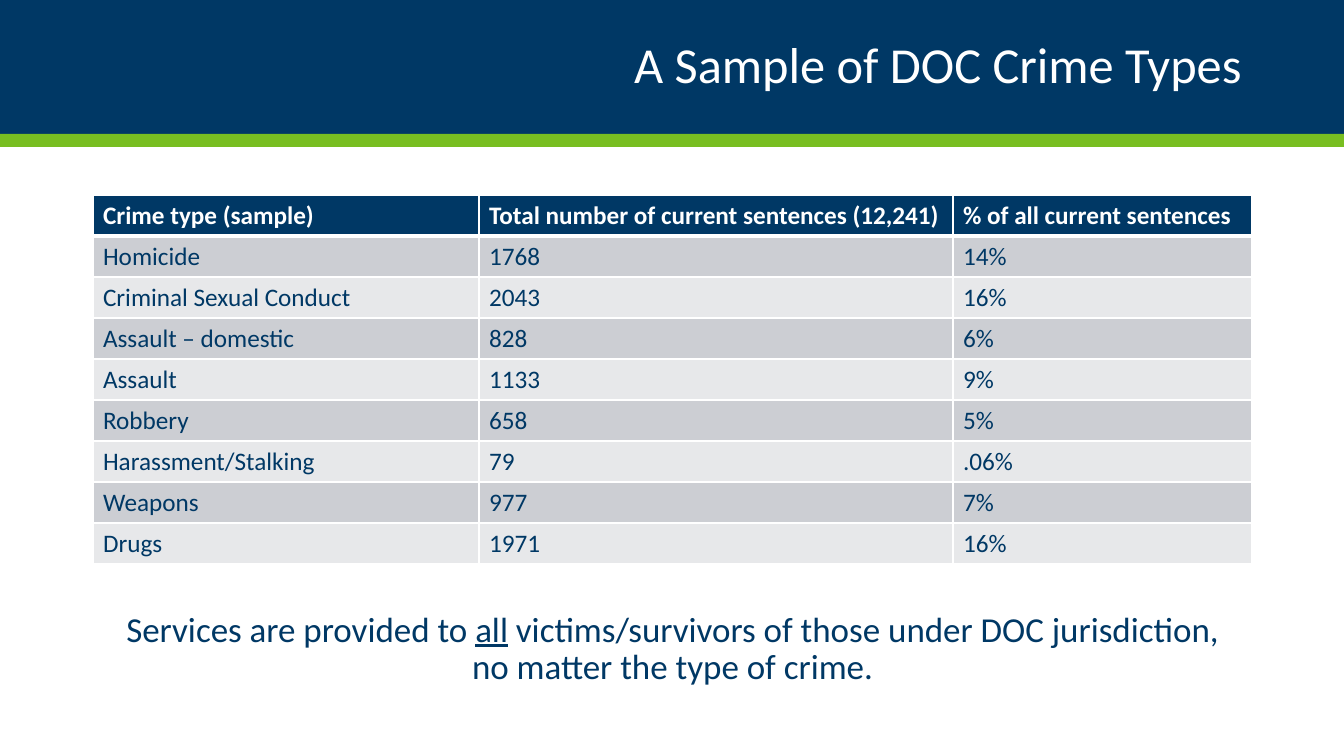
"""Build the slide showing a sample of DOC crime types."""
import dataclasses
import typing

import lxml.etree
import pptx
import pptx.dml.color
import pptx.enum.shapes
import pptx.enum.text
import pptx.oxml.ns
import pptx.util

EMU_PER_PX = 914400 / 100.8
SLIDE_WIDTH, SLIDE_HEIGHT = 1344, 756
NAVY = pptx.dml.color.RGBColor(0x00, 0x38, 0x65)
GREEN = pptx.dml.color.RGBColor(0x78, 0xBE, 0x21)
WHITE = pptx.dml.color.RGBColor(0xFF, 0xFF, 0xFF)
DARK_BAND = pptx.dml.color.RGBColor(0xCC, 0xCE, 0xD3)
LIGHT_BAND = pptx.dml.color.RGBColor(0xE7, 0xE8, 0xEA)
FONT = "Calibri"
ALIGN = pptx.enum.text.PP_ALIGN
ANCHOR = pptx.enum.text.MSO_ANCHOR


@dataclasses.dataclass(frozen=True)
class Band:
    top: int
    height: int
    color: pptx.dml.color.RGBColor


@dataclasses.dataclass(frozen=True)
class Crime:
    name: str
    sentences: str
    share: str


BANDS = (Band(0, 134, NAVY), Band(134, 13, GREEN))
HEADER = Crime("Crime type (sample)", "Total number of current sentences (12,241)",
               "% of all current sentences")
CRIMES = (
    Crime("Homicide", "1768", "14%"),
    Crime("Criminal Sexual Conduct", "2043", "16%"),
    Crime("Assault – domestic", "828", "6%"),
    Crime("Assault", "1133", "9%"),
    Crime("Robbery", "658", "5%"),
    Crime("Harassment/Stalking", "79", ".06%"),
    Crime("Weapons", "977", "7%"),
    Crime("Drugs", "1971", "16%"),
)
COLUMN_WIDTHS = (386, 474, 299)
ROW_HEIGHT = 41


def px(length: int) -> pptx.util.Emu:
    """Turn px into EMU."""
    return pptx.util.Emu(round(length * EMU_PER_PX))


def write(frame: typing.Any, *runs: str, size: int, color: pptx.dml.color.RGBColor,
          bold: bool = False, align: typing.Any = ALIGN.LEFT,
          spacing: float = 1.0, underlined: str = "") -> None:
    """Fill a text frame with one formatted paragraph."""
    paragraph = frame.paragraphs[0]
    paragraph.alignment = align
    paragraph.line_spacing = spacing
    for text in runs:
        run = paragraph.add_run()
        run.text = text
        run.font.name = FONT
        run.font.size = pptx.util.Pt(size)
        run.font.bold = bold
        run.font.color.rgb = color
        if text == underlined:
            run.font.underline = True


def add_band(slide: typing.Any, band: Band) -> None:
    """Draw a full-width band."""
    shape = slide.shapes.add_shape(pptx.enum.shapes.MSO_SHAPE.RECTANGLE,
                                   0, px(band.top), px(SLIDE_WIDTH), px(band.height))
    shape.shadow.inherit = False
    shape.fill.solid()
    shape.fill.fore_color.rgb = band.color
    shape.line.fill.background()


def set_title(slide: typing.Any, text: str) -> None:
    """Place the title in front of the bands."""
    title = slide.shapes.title
    title.left, title.top, title.width, title.height = px(93), px(17), px(1159), px(101)
    slide.shapes.element.append(title.element)
    title.text_frame.word_wrap = True
    title.text_frame.vertical_anchor = ANCHOR.MIDDLE
    write(title.text_frame, text, size=36, color=WHITE, align=ALIGN.RIGHT, spacing=0.9)


def set_borders(cell: typing.Any, top: int, bottom: int) -> None:
    """Give a cell white borders, with widths in points."""
    properties = cell._tc.get_or_add_tcPr()
    widths = {"a:lnL": 1, "a:lnR": 1, "a:lnT": top, "a:lnB": bottom}
    for position, (tag, width) in enumerate(widths.items()):
        border = lxml.etree.Element(pptx.oxml.ns.qn(tag), w=str(pptx.util.Pt(width)))
        fill = lxml.etree.SubElement(border, pptx.oxml.ns.qn("a:solidFill"))
        lxml.etree.SubElement(fill, pptx.oxml.ns.qn("a:srgbClr"), val=str(WHITE))
        properties.insert(position, border)


def add_crime_table(slide: typing.Any) -> None:
    """Draw the table of crime types."""
    records = (HEADER, *CRIMES)
    table = slide.shapes.add_table(len(records), len(COLUMN_WIDTHS), px(93), px(195),
                                   px(sum(COLUMN_WIDTHS)),
                                   px(ROW_HEIGHT * len(records))).table
    for column, width in zip(table.columns, COLUMN_WIDTHS):
        column.width = px(width)
    for index, (row, crime) in enumerate(zip(table.rows, records)):
        row.height = px(ROW_HEIGHT)
        is_header = index == 0
        band_color = DARK_BAND if index % 2 else LIGHT_BAND
        for cell, text in zip(row.cells, dataclasses.astuple(crime)):
            cell.fill.solid()
            cell.fill.fore_color.rgb = NAVY if is_header else band_color
            set_borders(cell, top=3 if index == 1 else 1, bottom=3 if is_header else 1)
            write(cell.text_frame, text, size=18, bold=is_header,
                  color=WHITE if is_header else NAVY)


def add_services_note(slide: typing.Any) -> None:
    """Write the note below the table."""
    note = slide.shapes.add_textbox(px(102), px(607), px(1141), px(101))
    note.fill.solid()
    note.fill.fore_color.rgb = WHITE
    note.text_frame.word_wrap = True
    write(note.text_frame, "Services are provided to ", "all",
          " victims/survivors of those under DOC jurisdiction, no matter the type of crime.",
          size=25, color=NAVY, align=ALIGN.CENTER, spacing=0.9, underlined="all")


def main() -> None:
    """Build and save the presentation."""
    presentation = pptx.Presentation()
    presentation.slide_width = px(SLIDE_WIDTH)
    presentation.slide_height = px(SLIDE_HEIGHT)
    slide = presentation.slides.add_slide(presentation.slide_layouts.get_by_name("Title Only"))
    for band in BANDS:
        add_band(slide, band)
    set_title(slide, "A Sample of DOC Crime Types")
    add_services_note(slide)
    add_crime_table(slide)
    presentation.save("out.pptx")


if __name__ == "__main__":
    main()
